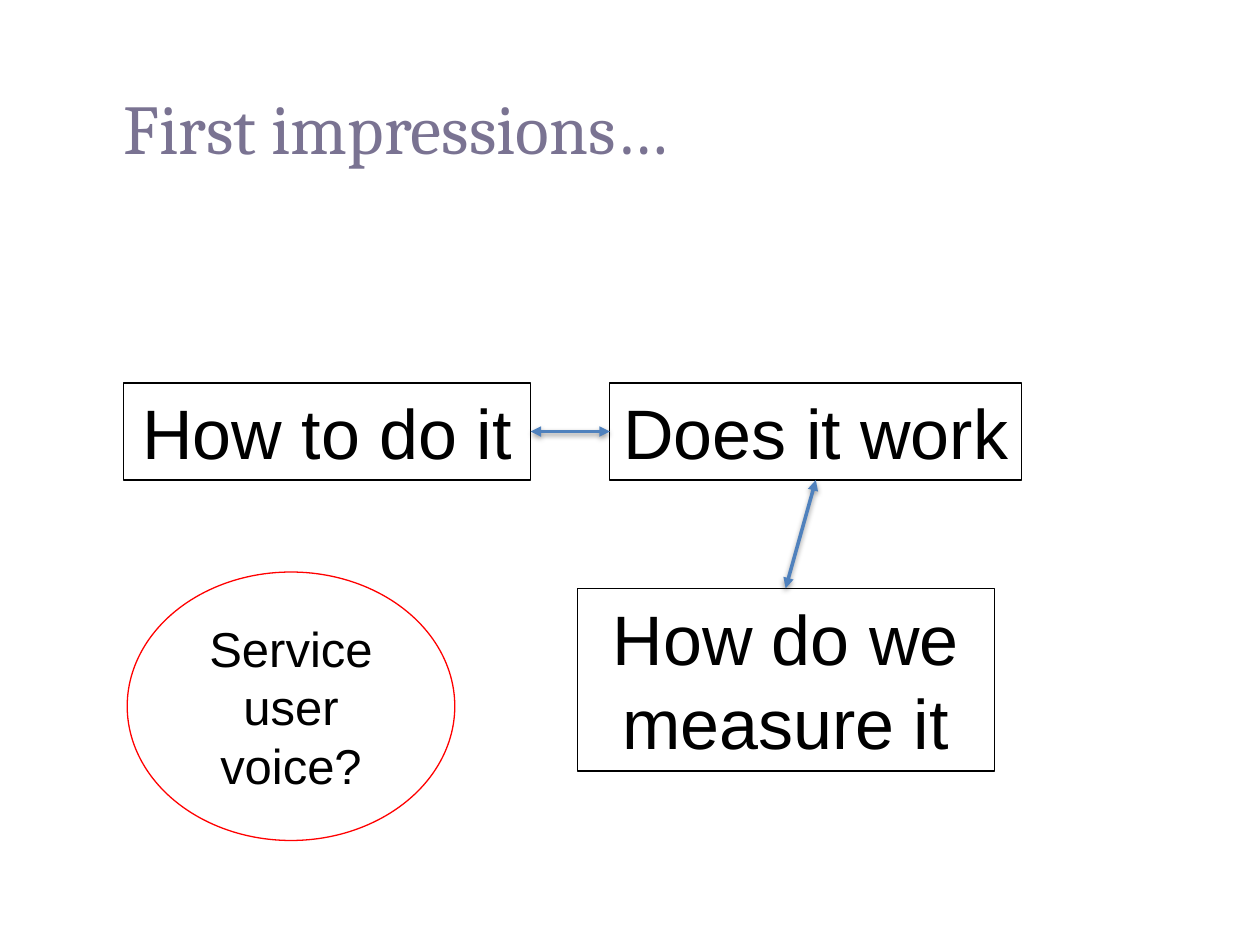
from dataclasses import dataclass

from lxml import etree
from pptx import Presentation
from pptx.dml.color import RGBColor
from pptx.enum.shapes import MSO_CONNECTOR, MSO_SHAPE
from pptx.enum.text import MSO_ANCHOR, MSO_AUTO_SIZE, PP_ALIGN
from pptx.oxml import parse_xml
from pptx.oxml.ns import nsdecls, qn
from pptx.shapes.autoshape import Shape
from pptx.slide import Slide
from pptx.util import Pt

RECTANGLE = MSO_SHAPE.RECTANGLE
OVAL = MSO_SHAPE.OVAL
STRAIGHT = MSO_CONNECTOR.STRAIGHT
MIDDLE = MSO_ANCHOR.MIDDLE
CENTER = PP_ALIGN.CENTER
GROW = MSO_AUTO_SIZE.SHAPE_TO_FIT_TEXT

# Connection sites of a rectangle
TOP, LEFT, BOTTOM, RIGHT = range(4)


@dataclass(frozen=True)
class Theme:
    title_font: str = "Cambria"
    body_font: str = "Arial"
    large_size: float = 40
    small_size: float = 28
    title_leading: float = 42
    outline_width: float = 0.75
    arrow_width: float = 2
    title_color: RGBColor = RGBColor(0x7A, 0x73, 0x92)
    ink: RGBColor = RGBColor(0, 0, 0)
    accent: RGBColor = RGBColor(0xFF, 0, 0)
    arrow: RGBColor = RGBColor(0x4F, 0x81, 0xBD)


THEME = Theme()


@dataclass(frozen=True)
class Bubble:
    text: str
    left: float
    top: float
    width: float
    height: float
    kind: MSO_SHAPE = RECTANGLE
    size: float = THEME.large_size
    outline: RGBColor = THEME.ink


HOW_TO = Bubble("How to do it", 70.6, 218.9, 232.6, 55.4)
DOES_IT_WORK = Bubble("Does it work", 348.5, 218.9, 235.4, 55.4)
MEASURE = Bubble("How do we measure it", 329.8, 336.2, 238.3, 104.4)
VOICE = Bubble("Service user voice?", 72.7, 326.9, 187.2, 153.4,
               OVAL, THEME.small_size, THEME.accent)


def add_title(slide: Slide, text: str) -> None:
    box = slide.shapes.add_textbox(Pt(70.6), Pt(54), Pt(513.4), Pt(51.1))
    frame = box.text_frame
    frame.word_wrap = True
    frame.margin_left = frame.margin_right = Pt(0)
    frame.margin_top = frame.margin_bottom = Pt(0)
    paragraph = frame.paragraphs[0]
    paragraph.text = text
    paragraph.line_spacing = Pt(THEME.title_leading)
    paragraph.font.name = THEME.title_font
    paragraph.font.size = Pt(THEME.large_size)
    paragraph.font.color.rgb = THEME.title_color


def add_bubble(slide: Slide, bubble: Bubble) -> Shape:
    shape = slide.shapes.add_shape(bubble.kind, Pt(bubble.left), Pt(bubble.top),
                                   Pt(bubble.width), Pt(bubble.height))
    shape.shadow.inherit = False
    shape.fill.background()
    shape.line.color.rgb = bubble.outline
    shape.line.width = Pt(THEME.outline_width)
    frame = shape.text_frame
    frame.word_wrap = True
    frame.auto_size = GROW
    frame.vertical_anchor = MIDDLE
    paragraph = frame.paragraphs[0]
    paragraph.text = bubble.text
    paragraph.alignment = CENTER
    paragraph.font.name = THEME.body_font
    paragraph.font.size = Pt(bubble.size)
    paragraph.font.color.rgb = THEME.ink
    return shape


def add_double_arrow(slide: Slide, start: Shape, start_site: int,
                     end: Shape, end_site: int) -> None:
    connector = slide.shapes.add_connector(STRAIGHT, 0, 0, 0, 0)
    connector.begin_connect(start, start_site)
    connector.end_connect(end, end_site)
    connector.line.color.rgb = THEME.arrow
    connector.line.width = Pt(THEME.arrow_width)
    # Arrowheads at both ends
    line = connector.line._get_or_add_ln()
    for end_tag in ("a:headEnd", "a:tailEnd"):
        etree.SubElement(line, qn(end_tag), type="triangle")
    # Soft shadow straight below the line
    connector._element.spPr.append(parse_xml(
        f'<a:effectLst {nsdecls("a")}>'
        f'<a:outerShdw blurRad="{Pt(3.1)}" dist="{Pt(1.6)}" dir="5400000" rotWithShape="0">'
        f'<a:srgbClr val="{THEME.ink}"><a:alpha val="38000"/></a:srgbClr>'
        '</a:outerShdw></a:effectLst>'))


def main() -> None:
    presentation = Presentation()
    presentation.slide_width, presentation.slide_height = Pt(720), Pt(540)
    slide = presentation.slides.add_slide(presentation.slide_layouts[6])

    add_title(slide, "First impressions…")

    # Linked questions
    how_to, does_it_work, measure = [
        add_bubble(slide, bubble) for bubble in (HOW_TO, DOES_IT_WORK, MEASURE)]
    add_double_arrow(slide, how_to, RIGHT, does_it_work, LEFT)
    add_double_arrow(slide, does_it_work, BOTTOM, measure, TOP)

    # Open question
    add_bubble(slide, VOICE)

    presentation.save("out.pptx")


if __name__ == "__main__":
    main()
